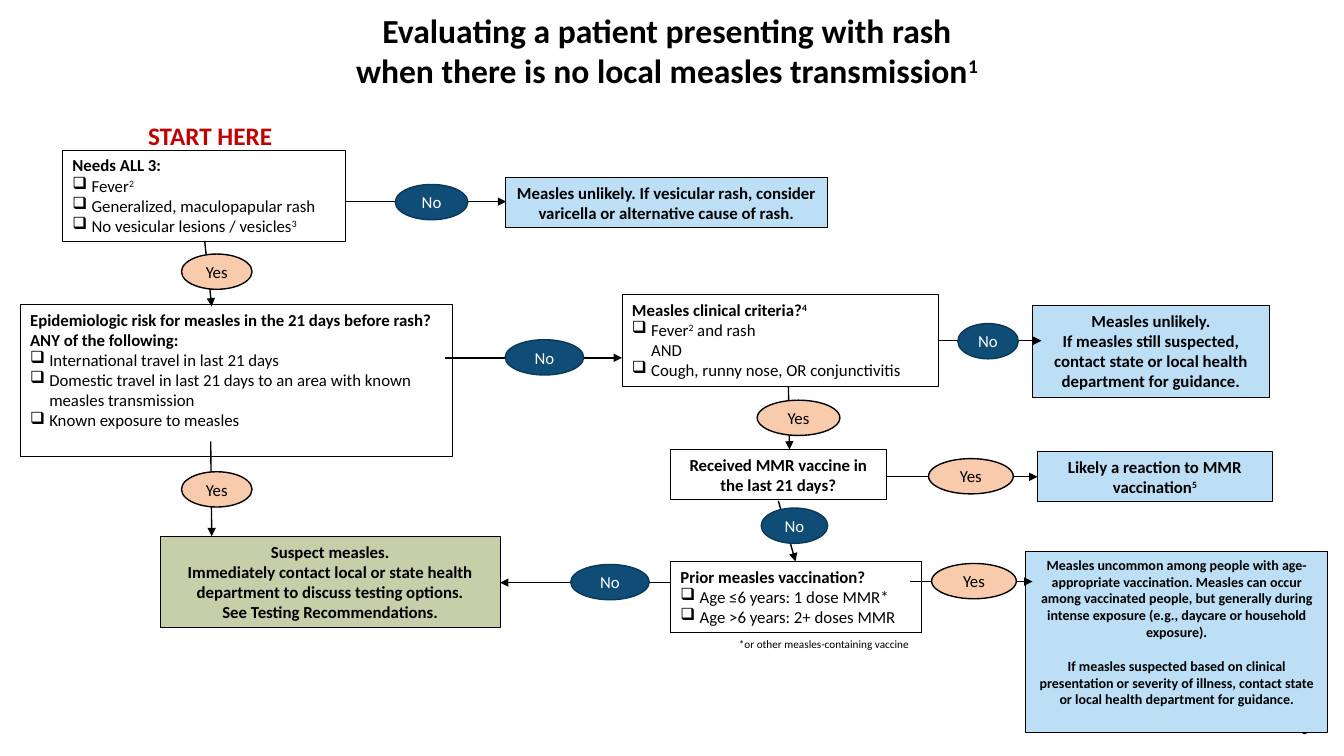
from lxml.etree import SubElement
from pptx import Presentation
from pptx.dml.color import RGBColor
from pptx.enum.shapes import MSO_CONNECTOR as Connector, MSO_SHAPE as Shape
from pptx.enum.text import MSO_ANCHOR as Anchor, PP_ALIGN as Align
from pptx.oxml.ns import qn
from pptx.util import Inches, Pt

BLACK = RGBColor(0x00, 0x00, 0x00)
WHITE = RGBColor(0xFF, 0xFF, 0xFF)
RED = RGBColor(0xC0, 0x00, 0x00)
BLUE = RGBColor(0xBC, 0xDF, 0xF6)
GREEN = RGBColor(0xC7, 0xCE, 0xAA)
PEACH = RGBColor(0xF8, 0xCB, 0xAD)
NAVY = RGBColor(0x0F, 0x4C, 0x76)
NAVY_EDGE = RGBColor(0x0B, 0x38, 0x57)

ITEM_INDENT = Inches(0.19)
ANSWER_HEIGHT = 0.35
ANSWER_STYLES = {"Yes": (PEACH, BLACK, BLACK), "No": (NAVY, NAVY_EDGE, WHITE)}

# Place (left, top, width, height), headings, checklist items.
QUESTIONS = [
    ((0.62, 1.49, 2.81, 0.91), ["Needs ALL 3:"],
     ["❑Fever^2^", "❑Generalized, maculopapular rash",
      "❑No vesicular lesions / vesicles^3^"]),
    ((0.2, 3.02, 4.29, 1.51),
     ["Epidemiologic risk for measles in the 21 days before rash?",
      "ANY of the following:"],
     ["❑International travel in last 21 days",
      "❑Domestic travel in last 21 days to an area with known "
      "measles transmission",
      "❑Known exposure to measles"]),
    ((6.17, 2.92, 3.14, 0.91), ["Measles clinical criteria?^4^"],
     ["❑Fever^2^ and rash", "AND",
      "❑Cough, runny nose, OR conjunctivitis"]),
    ((6.65, 5.57, 2.49, 0.71), ["Prior measles vaccination?"],
     ["❑Age ≤6 years: 1 dose MMR*", "❑Age >6 years: 2+ doses MMR"]),
]

# Place, fill, text size, space between paragraphs, paragraphs.
OUTCOMES = [
    ((6.65, 4.46, 2.14, 0.5), None, 12, 0,
     ["Received MMR vaccine in the last 21 days?"]),
    ((5.01, 1.76, 3.2, 0.5), BLUE, 12, 0,
     ["Measles unlikely. If vesicular rash, consider varicella or "
      "alternative cause of rash."]),
    ((10.24, 3.03, 2.35, 0.91), BLUE, 12, 0,
     ["Measles unlikely.",
      "If measles still suspected, contact state or local health "
      "department for guidance."]),
    ((10.29, 4.48, 2.33, 0.5), BLUE, 12, 0,
     ["Likely a reaction to MMR vaccination^5^"]),
    ((10.17, 5.47, 3, 1.8), BLUE, 10, 12,
     ["Measles uncommon among people with age-appropriate vaccination. "
      "Measles can occur among vaccinated people, but generally during "
      "intense exposure (e.g., daycare or household exposure).",
      "If measles suspected based on clinical presentation or severity of "
      "illness, contact state or local health department for guidance."]),
    ((1.59, 5.32, 3.37, 0.91), GREEN, 12, 0,
     ["Suspect measles.",
      "Immediately contact local or state health department to discuss "
      "testing options.",
      "See Testing Recommendations."]),
]

# Arrow start, arrow end, answer, answer left, top and width.
BRANCHES = [
    ((3.43, 2), (5.02, 2), "No", 3.92, 1.83, 0.72),
    ((2.03, 2.39), (2.1, 3.04), "Yes", 1.8, 2.52, 0.7),
    ((4.41, 3.55), (6.17, 3.55), "No", 5.01, 3.37, 0.78),
    ((2.09, 4.38), (2.1, 5.32), "Yes", 1.8, 4.68, 0.7),
    ((9.31, 3.38), (10.33, 3.38), "No", 9.5, 3.21, 0.6),
    ((7.82, 3.84), (7.83, 4.46), "Yes", 7.51, 3.97, 0.82),
    ((8.79, 4.73), (10.29, 4.73), "Yes", 9.21, 4.55, 0.84),
    ((7.72, 4.97), (7.89, 5.57), "No", 7.55, 5.04, 0.66),
    ((6.65, 5.78), (4.96, 5.78), "No", 5.66, 5.6, 0.78),
    ((9.03, 5.77), (10.24, 5.77), "Yes", 9.24, 5.59, 0.84),
]


def apply_format(target, values):
    for name, value in values.items():
        setattr(target, name, value)


def write(paragraph, text, size=12, bold=False, color=BLACK, align=Align.LEFT):
    """Write text; parts between ^ marks are superscript."""
    paragraph.alignment = align
    for index, part in enumerate(text.split("^")):
        if not part:
            continue
        run = paragraph.add_run()
        run.text = part
        apply_format(run.font, {"name": "Calibri", "size": Pt(size), "bold": bold})
        run.font.color.rgb = color
        if index % 2:
            run.font._element.set("baseline", "30000")


def next_paragraph(frame, index):
    return frame.add_paragraph() if index else frame.paragraphs[0]


def add_box(slide, place, fill=None, edge=BLACK, edge_width=0.75,
            outline=Shape.RECTANGLE, anchor=Anchor.TOP):
    box = slide.shapes.add_shape(outline, *map(Inches, place))
    box.shadow.inherit = False
    if fill is None:
        box.fill.background()
    else:
        box.fill.solid()
        box.fill.fore_color.rgb = fill
    box.line.color.rgb = edge
    box.line.width = Pt(edge_width)
    apply_format(box.text_frame, {"word_wrap": True, "vertical_anchor": anchor})
    return box.text_frame


def add_question(slide, place, headings, items):
    frame = add_box(slide, place)
    for index, heading in enumerate(headings):
        write(next_paragraph(frame, index), heading, bold=True)
    for item in items:
        paragraph = frame.add_paragraph()
        properties = paragraph._p.get_or_add_pPr()
        properties.set("marL", str(ITEM_INDENT))
        if item.startswith("❑"):
            properties.set("indent", str(-ITEM_INDENT))
            SubElement(properties, qn("a:buChar"), char="❑")
        write(paragraph, item.lstrip("❑"))


def add_outcome(slide, place, fill, size, gap, paragraphs):
    frame = add_box(slide, place, fill)
    for index, text in enumerate(paragraphs):
        paragraph = next_paragraph(frame, index)
        if index:
            paragraph.space_before = Pt(gap)
        write(paragraph, text, size, bold=True, align=Align.CENTER)


def add_arrow(slide, start, end):
    arrow = slide.shapes.add_connector(
        Connector.STRAIGHT, *map(Inches, start + end))
    arrow.line.color.rgb = BLACK
    arrow.line.width = Pt(1)
    SubElement(arrow.line._get_or_add_ln(), qn("a:tailEnd"), type="triangle")
    SubElement(arrow._element.spPr, qn("a:effectLst"))


def add_answer(slide, answer, left, top, width):
    fill, edge, color = ANSWER_STYLES[answer]
    frame = add_box(slide, (left, top, width, ANSWER_HEIGHT), fill, edge, 1,
                    Shape.OVAL, Anchor.MIDDLE)
    write(frame.paragraphs[0], answer, color=color, align=Align.CENTER)


def add_label(slide, place, text, wrap=True, anchor=Anchor.TOP, **style):
    frame = slide.shapes.add_textbox(*map(Inches, place)).text_frame
    apply_format(frame, {"word_wrap": wrap, "vertical_anchor": anchor})
    write(frame.paragraphs[0], text, **style)


def main():
    deck = Presentation()
    deck.slide_width, deck.slide_height = Inches(13.33), Inches(7.5)
    slide = deck.slides.add_slide(deck.slide_layouts[6])

    add_label(slide, (11.65, 7.02, 1.43, 0.4), "6", anchor=Anchor.MIDDLE,
              align=Align.RIGHT)
    add_label(slide, (3.42, 0.05, 6.39, 0.91),
              "Evaluating a patient presenting with rash when there is "
              "no local measles transmission^1^",
              size=24, bold=True, align=Align.CENTER)
    add_label(slide, (1.37, 1.14, 1.44, 0.4), "START HERE", wrap=False,
              size=18, bold=True, color=RED)
    for question in QUESTIONS:
        add_question(slide, *question)
    for outcome in OUTCOMES:
        add_outcome(slide, *outcome)
    for start, end, *answer in BRANCHES:
        add_arrow(slide, start, end)
        add_answer(slide, *answer)
    add_label(slide, (7.23, 6.27, 1.9, 0.24),
              "*or other measles-containing vaccine", size=8)
    deck.save("out.pptx")


if __name__ == "__main__":
    main()
